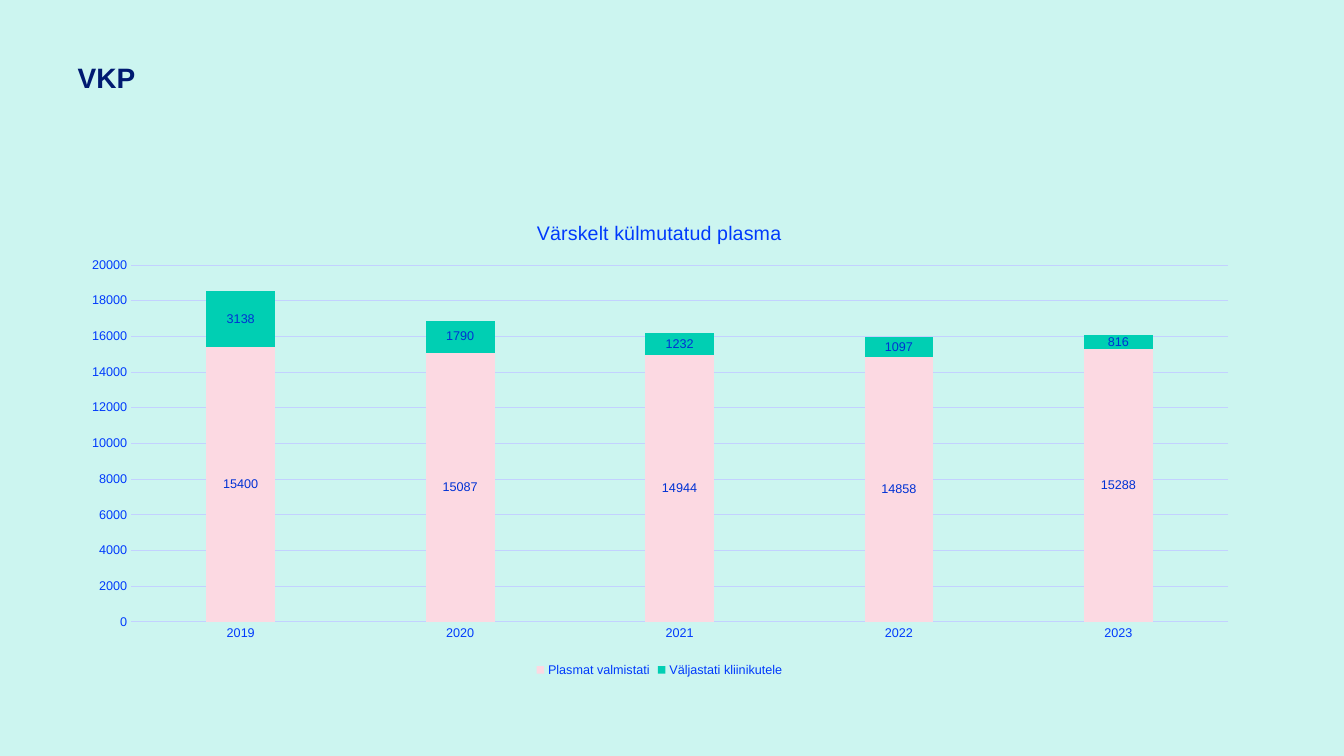
"""Builds the VKP slide with a stacked column chart of fresh frozen plasma."""
from dataclasses import dataclass

from lxml import etree
from pptx import Presentation
from pptx.chart.chart import Chart
from pptx.chart.data import CategoryChartData
from pptx.dml.color import RGBColor
from pptx.enum.chart import XL_CHART_TYPE, XL_LABEL_POSITION, XL_LEGEND_POSITION, XL_TICK_MARK
from pptx.enum.text import MSO_ANCHOR, PP_ALIGN
from pptx.oxml.ns import qn
from pptx.slide import Slide
from pptx.util import Inches, Pt

STACKED = XL_CHART_TYPE.COLUMN_STACKED
CENTER = XL_LABEL_POSITION.CENTER
BOTTOM = XL_LEGEND_POSITION.BOTTOM
NO_TICK = XL_TICK_MARK.NONE
TOP = MSO_ANCHOR.TOP
LEFT = PP_ALIGN.LEFT


@dataclass(frozen=True)
class Theme:
    font: str = "Arial"
    background: str = "CCF5F0"
    heading: str = "001A71"
    chart_text: str = "003AFC"
    value_text: str = "0031D4"
    grid: str = "C3D1FF"
    heading_size: float = 20
    chart_title_size: float = 14
    base_size: float = 10
    small_size: float = 9
    line_width: float = 0.75


@dataclass(frozen=True)
class PlasmaSeries:
    name: str
    units: tuple[int, ...]
    color: str


@dataclass(frozen=True)
class Box:
    left: float
    top: float
    width: float
    height: float

    def emu(self) -> tuple[int, ...]:
        return tuple(Inches(v) for v in (self.left, self.top, self.width, self.height))


THEME = Theme()
HEADING_BOX = Box(0.67, 0.59, 11.74, 1.45)
CHART_BOX = Box(0.67, 2, 11.74, 4.76)
PLOT_BOX = Box(1.3, 2.63, 10.88, 3.54)
YEARS = ("2019", "2020", "2021", "2022", "2023")
PLASMA = (
    PlasmaSeries("Plasmat valmistati", (15400, 15087, 14944, 14858, 15288), "FCD9E2"),
    PlasmaSeries("Väljastati kliinikutele", (3138, 1790, 1232, 1097, 816), "00CFB3"),
)


def apply(target: object, values: dict[str, object]) -> None:
    for name, value in values.items():
        setattr(target, name, value)


def style_font(font: object, size: float, color: str, bold: bool = False) -> None:
    apply(font, {"name": THEME.font, "size": Pt(size), "bold": bold})
    font.color.rgb = RGBColor.from_string(color)


def style_line(line: object) -> None:
    line.color.rgb = RGBColor.from_string(THEME.grid)
    line.width = Pt(THEME.line_width)


def add_heading(slide: Slide, text: str) -> None:
    heading = slide.shapes.title
    box = dict(zip(("left", "top", "width", "height"), HEADING_BOX.emu()))
    apply(heading, box)
    heading.text = text
    apply(heading.text_frame, {"vertical_anchor": TOP, "word_wrap": True})
    paragraph = heading.text_frame.paragraphs[0]
    apply(paragraph, {"alignment": LEFT, "line_spacing": 0.9})
    style_font(paragraph.runs[0].font, THEME.heading_size, THEME.heading, True)


def place_plot(chart: Chart) -> None:
    plot_area = chart.element.find(".//" + qn("c:plotArea"))
    for old in plot_area.findall(qn("c:layout")):
        plot_area.remove(old)
    layout = etree.Element(qn("c:layout"))
    manual = etree.SubElement(layout, qn("c:manualLayout"))
    settings = {
        "layoutTarget": "inner",
        "xMode": "edge",
        "yMode": "edge",
        "x": (PLOT_BOX.left - CHART_BOX.left) / CHART_BOX.width,
        "y": (PLOT_BOX.top - CHART_BOX.top) / CHART_BOX.height,
        "w": PLOT_BOX.width / CHART_BOX.width,
        "h": PLOT_BOX.height / CHART_BOX.height,
    }
    for tag, value in settings.items():
        etree.SubElement(manual, qn(f"c:{tag}")).set("val", str(value))
    plot_area.insert(0, layout)


def style_axes(chart: Chart) -> None:
    for axis in (chart.category_axis, chart.value_axis):
        apply(axis, {"major_tick_mark": NO_TICK, "minor_tick_mark": NO_TICK})
        style_font(axis.tick_labels.font, THEME.small_size, THEME.chart_text)
    style_line(chart.category_axis.format.line)
    amounts = chart.value_axis
    apply(amounts, {"minimum_scale": 0, "maximum_scale": 20000, "major_unit": 2000})
    amounts.format.line.fill.background()
    style_line(amounts.major_gridlines.format.line)


def add_plasma_chart(slide: Slide, title: str) -> None:
    data = CategoryChartData(number_format="General")
    data.categories = YEARS
    for series in PLASMA:
        data.add_series(series.name, series.units)
    chart = slide.shapes.add_chart(STACKED, *CHART_BOX.emu(), data).chart
    style_font(chart.font, THEME.base_size, THEME.heading)
    apply(chart, {"has_title": True, "has_legend": True})
    chart.chart_title.include_in_layout = False
    chart.chart_title.text_frame.text = title
    title_run = chart.chart_title.text_frame.paragraphs[0].runs[0]
    style_font(title_run.font, THEME.chart_title_size, THEME.chart_text)
    apply(chart.legend, {"position": BOTTOM, "include_in_layout": False})
    style_font(chart.legend.font, THEME.small_size, THEME.chart_text)
    plot = chart.plots[0]
    apply(plot, {"gap_width": 219, "overlap": 100, "vary_by_categories": False})
    for columns, series in zip(plot.series, PLASMA):
        columns.format.fill.solid()
        columns.format.fill.fore_color.rgb = RGBColor.from_string(series.color)
        apply(columns.data_labels, {"show_value": True, "position": CENTER})
        style_font(columns.data_labels.font, THEME.small_size, THEME.value_text)
    style_axes(chart)
    place_plot(chart)


def main() -> None:
    deck = Presentation()
    apply(deck, {"slide_width": Inches(13.33), "slide_height": Inches(7.5)})
    slide = deck.slides.add_slide(deck.slide_layouts.get_by_name("Title Only"))
    slide.background.fill.solid()
    slide.background.fill.fore_color.rgb = RGBColor.from_string(THEME.background)
    add_heading(slide, "VKP")
    add_plasma_chart(slide, "Värskelt külmutatud plasma")
    deck.save("out.pptx")


if __name__ == "__main__":
    main()
